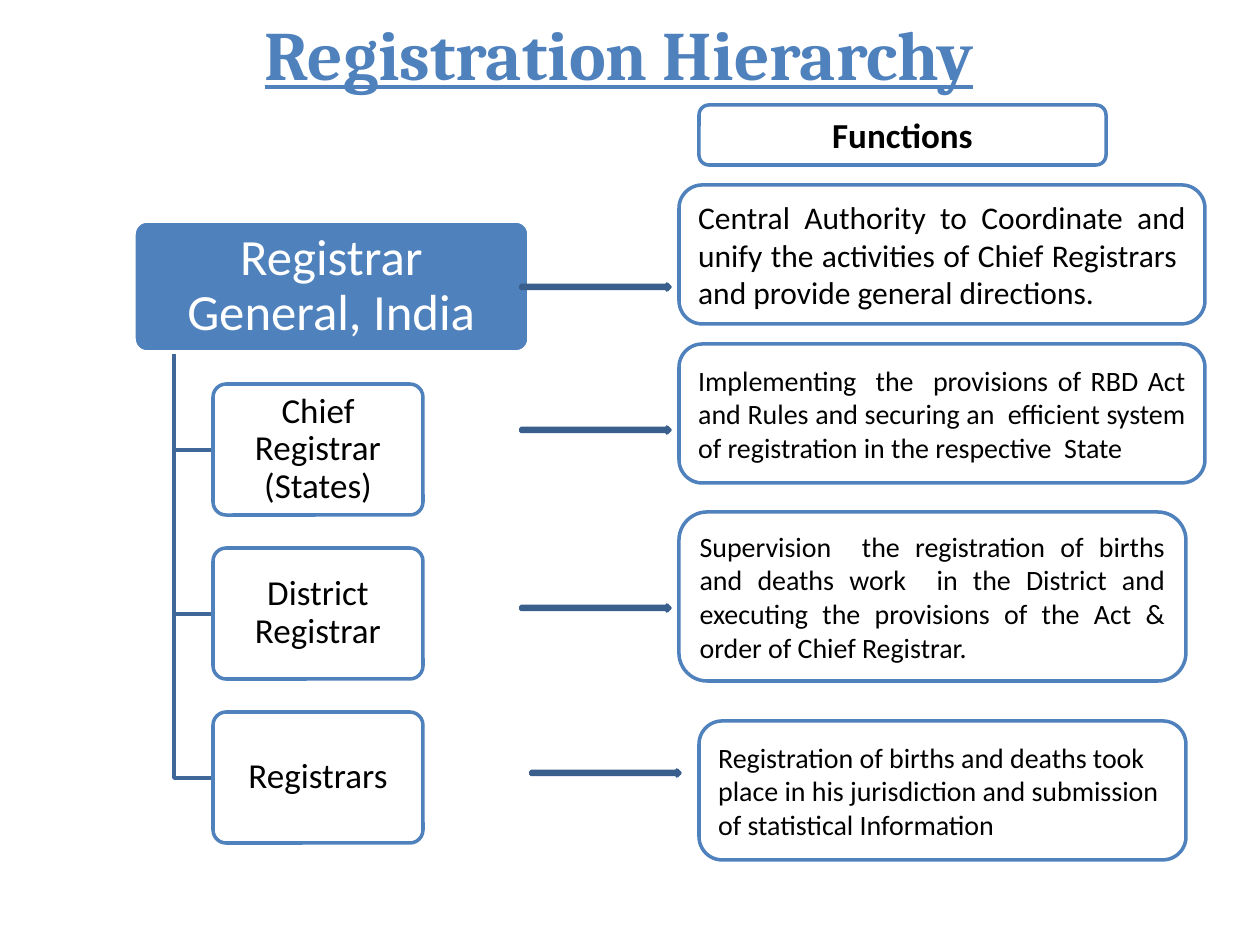
from pptx import Presentation
from pptx.dml.color import RGBColor
from pptx.enum import shapes, text
from pptx.util import Pt

PX = 914400 / 126
COLORS = {"blue": "4F81BD", "branch": "3F6797", "arrow": "3A5F8C", "white": "FFFFFF", "black": "000000"}
CENTER, JUSTIFY, LEFT = text.PP_ALIGN.CENTER, text.PP_ALIGN.JUSTIFY, text.PP_ALIGN.LEFT


def add_box(kind, bounds, fill, line):
    box = page.shapes.add_shape(kind, *[round(length * PX) for length in bounds])
    box.shadow.inherit = False
    box.fill.solid()
    box.fill.fore_color.rgb = RGBColor.from_string(COLORS[fill])
    box.line.color.rgb = RGBColor.from_string(COLORS[line])
    box.line.width = Pt(2)
    return box


def write(box, words, size, color="black", align=CENTER, font="Calibri", bold=False):
    frame = box.text_frame
    frame.text = words
    frame.word_wrap = True
    frame.vertical_anchor = text.MSO_ANCHOR.MIDDLE
    para = frame.paragraphs[0]
    para.alignment = align
    span = para.runs[0]
    span.font.name = font
    span.font.size = Pt(size)
    span.font.bold = bold
    span.font.color.rgb = RGBColor.from_string(COLORS[color])
    return span


deck = Presentation()
deck.slide_width, deck.slide_height = round(1260 * PX), round(945 * PX)
page = deck.slides.add_slide(deck.slide_layouts[6])
ROUNDED = shapes.MSO_SHAPE.ROUNDED_RECTANGLE
ARROW = shapes.MSO_SHAPE.RIGHT_ARROW

title = page.shapes.add_textbox(*[round(length * PX) for length in (52, 0, 1134, 105)])
write(title, "Registration Hierarchy", 39.6, "blue", font="Cambria", bold=True).font.underline = True

offices = [
    ("Registrar General, India", (134, 221, 395, 131), 29, "blue", "white", "white", 11),
]
for row, office in enumerate(["Chief Registrar (States)", "District Registrar", "Registrars"]):
    top = 384 + 164 * row
    offices.append((office, (213, top, 210, 131), 20, "white", "blue", "black", 9))
    branch = page.shapes.build_freeform(174, 352, scale=PX)
    branch.add_line_segments([(174, top + 66), (213, top + 66)], close=False)
    elbow = branch.convert_to_shape()
    elbow.shadow.inherit = False
    elbow.fill.background()
    elbow.line.color.rgb = RGBColor.from_string(COLORS["branch"])
    elbow.line.width = Pt(2)

for words, bounds, size, fill, line, color, inset in offices:
    box = add_box(ROUNDED, bounds, fill, line)
    box.adjustments[0] = 0.1
    write(box, words, size, color)
    frame = box.text_frame
    frame.margin_left = frame.margin_right = round(inset * PX)
    frame.margin_top = frame.margin_bottom = round(8 * PX)
    frame.paragraphs[0].line_spacing = 0.9

heading = add_box(ROUNDED, (699, 105, 407, 60), "white", "blue")
write(heading, "Functions", 20, bold=True)

functions = [
    ("Central Authority to Coordinate and unify the activities of Chief Registrars  "
     "and provide general directions.", (679, 185, 526, 139), 18, JUSTIFY),
    ("Implementing  the  provisions of RBD Act and Rules and securing an  efficient system "
     "of registration in the respective  State", (679, 344, 526, 139), 16, JUSTIFY),
    ("Supervision  the registration of births and deaths work  in the District and "
     "executing the provisions of the Act & order of Chief Registrar.", (679, 512, 507, 169), 16, JUSTIFY),
    ("Registration of births and deaths took place in his jurisdiction and submission "
     "of statistical Information", (699, 721, 487, 139), 16, LEFT),
]
for words, bounds, size, align in functions:
    write(add_box(ROUNDED, bounds, "white", "blue"), words, size, align=align)

for left, top in [(521, 284), (521, 427), (521, 605), (531, 770)]:
    add_box(ARROW, (left, top, 149, 6), "blue", "arrow")

deck.save("out.pptx")
